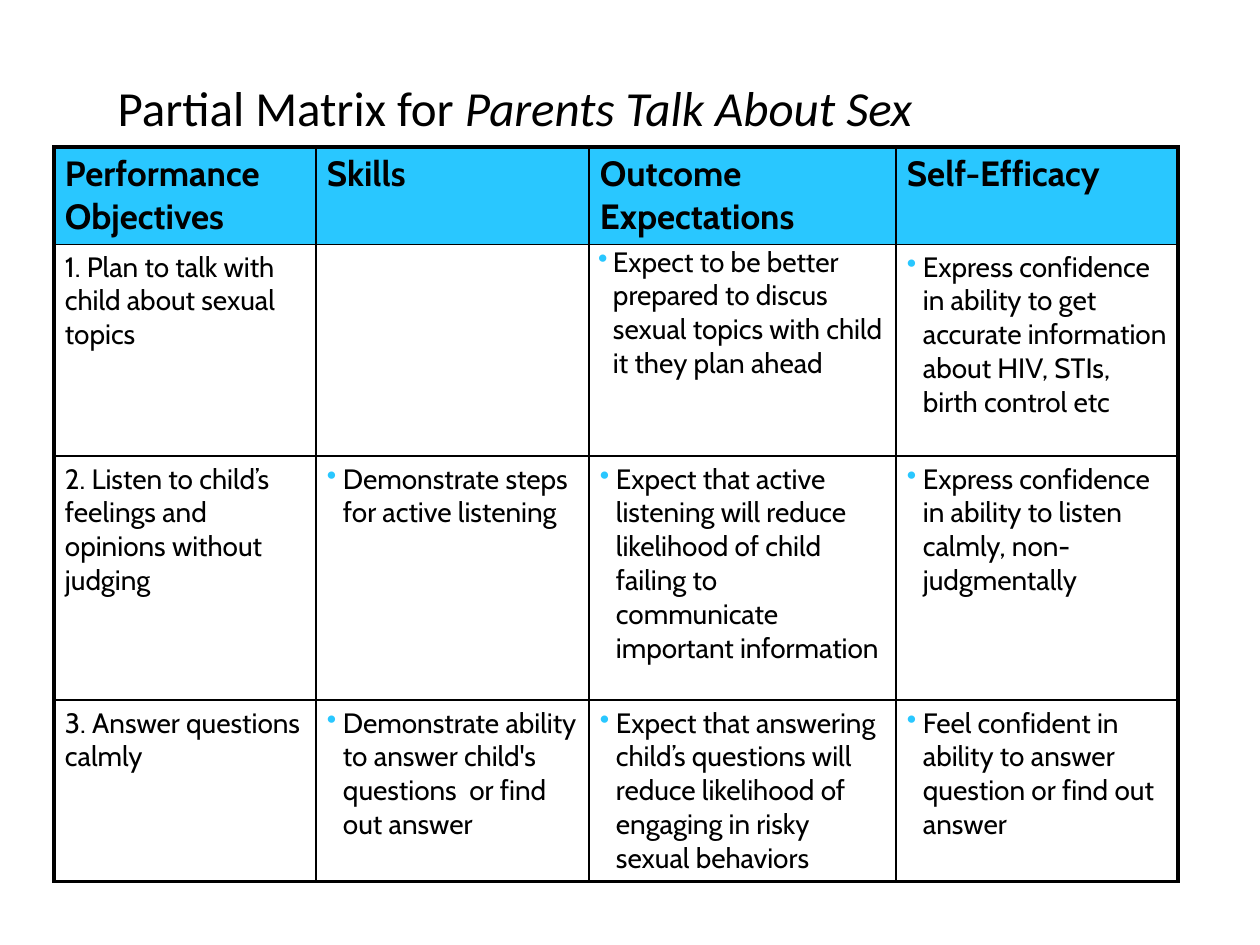
from pptx import Presentation
from pptx.dml.color import RGBColor as Color
from pptx.enum.text import MSO_ANCHOR as Anchor, MSO_AUTO_SIZE as AutoSize, PP_ALIGN as Align
from pptx.oxml.ns import qn
from pptx.util import Emu, Pt
from lxml.etree import SubElement

COLORS = {"text": "000000", "accent": "29C7FF", "line": "000000"}
TITLE = [("Partial Matrix for ", False), ("Parents Talk About Sex", True)]
COLUMNS = [262, 273, 307, 282]
ROWS = [93, 212, 244, 175]
MATRIX = [
    ["Performance Objectives", "Skills", "Outcome Expectations", "Self-Efficacy"],
    [
        "1. Plan to talk with child about sexual topics",
        "",
        "Expect to be better prepared to discus sexual topics with child it they plan ahead",
        "Express confidence in ability to get accurate information about HIV, STIs, birth control etc",
    ],
    [
        "2. Listen to child’s feelings and opinions without judging",
        "Demonstrate steps for active listening",
        "Expect that active listening will reduce likelihood of child failing to communicate important information",
        "Express confidence in ability to listen calmly, non-judgmentally",
    ],
    [
        "3. Answer questions calmly",
        "Demonstrate ability to answer child's questions  or find out answer",
        "Expect that answering child’s questions will reduce likelihood of engaging in risky sexual behaviors",
        "Feel confident in ability to answer question or find out answer",
    ],
]
TIGHT_CELL = (1, 2)


def px(length):
    return Emu(round(length * 914400 / 126))


class SlideBuilder:
    title_font = "Calibri"
    table_font = "Cabin"

    def __init__(self, slide):
        self.slide = slide

    def add_run(self, paragraph, text, font, size, bold=False, italic=False):
        run = paragraph.add_run()
        run.text = text
        run.font.name = font
        run.font.size = Pt(size)
        run.font.bold = bold
        run.font.italic = italic
        run.font.color.rgb = Color.from_string(COLORS["text"])

    def title(self, left, top, width, height, runs):
        shape = self.slide.shapes.title
        shape.left, shape.top, shape.width, shape.height = map(px, (left, top, width, height))
        frame = shape.text_frame
        frame.auto_size = AutoSize.NONE
        frame.vertical_anchor = Anchor.MIDDLE
        paragraph = frame.paragraphs[0]
        paragraph.alignment = Align.LEFT
        paragraph.line_spacing = 0.9
        for text, italic in runs:
            self.add_run(paragraph, text, self.title_font, 28, italic=italic)

    def bullet(self, paragraph, margin, indent):
        properties = paragraph._p.get_or_add_pPr()
        properties.set("marL", str(px(margin)))
        properties.set("indent", str(px(-indent)))
        color = SubElement(properties, qn("a:buClr"))
        SubElement(color, qn("a:srgbClr"), val=COLORS["accent"])
        SubElement(properties, qn("a:buChar"), char="•")

    def borders(self, cell, outer_sides):
        properties = cell._tc.get_or_add_tcPr()
        for side, is_outer in zip("LRTB", outer_sides):
            width = Pt(2.25 if is_outer else 1)
            line = SubElement(properties, qn(f"a:ln{side}"), w=str(width))
            fill = SubElement(line, qn("a:solidFill"))
            SubElement(fill, qn("a:srgbClr"), val=COLORS["line"])

    def cell(self, cell, text, is_header, has_bullet, is_tight):
        margins = (1, 1, 1, 0) if is_tight else (11, 6, 11, 6)
        cell.margin_left, cell.margin_top, cell.margin_right, cell.margin_bottom = map(px, margins)
        cell.vertical_anchor = Anchor.TOP
        if is_header:
            cell.fill.solid()
            cell.fill.fore_color.rgb = Color.from_string(COLORS["accent"])
        else:
            cell.fill.background()
        if not text:
            return
        paragraph = cell.text_frame.paragraphs[0]
        if not is_tight:
            paragraph.space_before = Pt(4 if is_header else 3)
        if has_bullet:
            self.bullet(paragraph, *((23, 15) if is_tight else (16, 16)))
        self.add_run(paragraph, text, self.table_font, 20 if is_header else 16, bold=is_header)

    def table(self, left, top, height, columns, rows, matrix):
        shape = self.slide.shapes.add_table(
            len(rows), len(columns), px(left), px(top), px(sum(columns)), px(height)
        )
        table = shape.table
        table.first_row = table.horz_banding = False
        for column, width in zip(table.columns, columns):
            column.width = px(width)
        for row, row_height in zip(table.rows, rows):
            row.height = px(row_height)
        shape.height = px(height)
        last_row, last_column = len(rows) - 1, len(columns) - 1
        for r, texts in enumerate(matrix):
            for c, text in enumerate(texts):
                cell = table.cell(r, c)
                self.borders(cell, (c == 0, c == last_column, r == 0, r == last_row))
                self.cell(cell, text, r == 0, r > 0 and c > 0, (r, c) == TIGHT_CELL)


def main():
    presentation = Presentation()
    presentation.slide_width, presentation.slide_height = px(1260), px(945)
    builder = SlideBuilder(presentation.slides.add_slide(presentation.slide_layouts[5]))
    builder.title(105, 53, 1073, 116, TITLE)
    builder.table(54, 147, 772, COLUMNS, ROWS, MATRIX)
    presentation.save("out.pptx")


if __name__ == "__main__":
    main()
